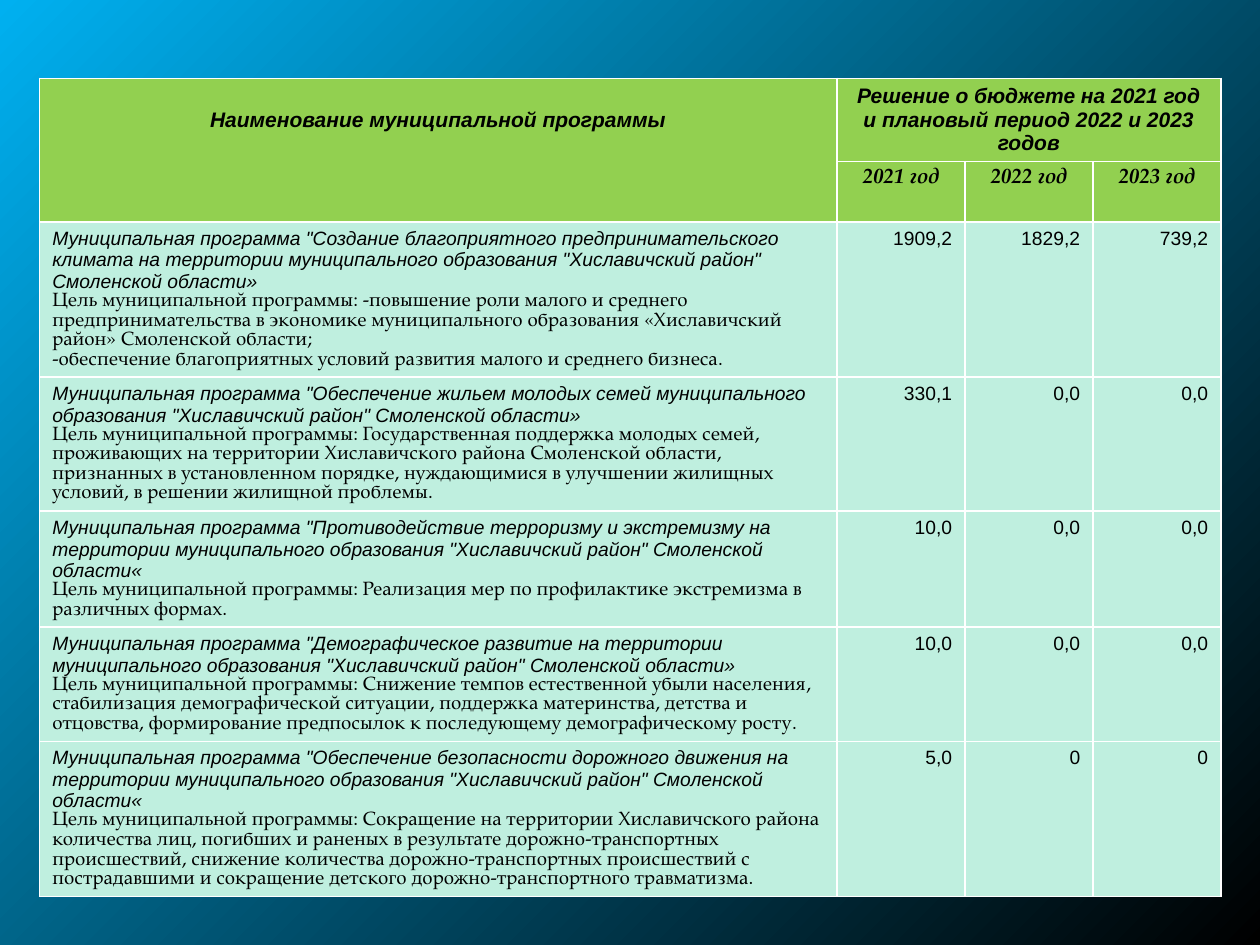
from lxml import etree
from pptx import Presentation, util as u
from pptx.dml import color
from pptx.enum import text
from pptx.oxml import ns

HEAD, ROW, INK = "92D050", "BFEFDF", "000000"
SANS, SERIF = "Arial", "TeX Gyre Pagella"
LEFT, MID, RIGHT = text.PP_ALIGN.LEFT, text.PP_ALIGN.CENTER, text.PP_ALIGN.RIGHT

NAME = "Муниципальная программа \""
AREA = "муниципального образования \"Хиславичский район\" Смоленской области"
GOAL = "Цель муниципальной программы: "

# Each programme: row height, title, goals, yearly sums
PLANS = [
    (3.13, f"Создание благоприятного предпринимательского климата на территории {AREA}»",
     ["-повышение роли малого и среднего предпринимательства в экономике "
      "муниципального образования «Хиславичский район» Смоленской области;",
      "-обеспечение благоприятных условий развития малого и среднего бизнеса."],
     ["1909,2", "1829,2", "739,2"]),
    (2.7, f"Обеспечение жильем молодых семей {AREA}»",
     ["Государственная поддержка молодых семей, проживающих на территории "
      "Хиславичского района Смоленской области, признанных в установленном порядке, "
      "нуждающимися в улучшении жилищных условий, в решении жилищной проблемы."],
     ["330,1", "0,0", "0,0"]),
    (2.34, f"Противодействие терроризму и экстремизму на территории {AREA}«",
     ["Реализация мер по профилактике экстремизма в различных формах."],
     ["10,0", "0,0", "0,0"]),
    (2.3, f"Демографическое развитие на территории {AREA}»",
     ["Снижение темпов естественной убыли населения, стабилизация демографической "
      "ситуации, поддержка материнства, детства и отцовства, формирование предпосылок "
      "к последующему демографическому росту."],
     ["10,0", "0,0", "0,0"]),
    (3.13, f"Обеспечение безопасности дорожного движения на территории {AREA}«",
     ["Сокращение на территории Хиславичского района количества лиц, погибших и "
      "раненых в результате дорожно-транспортных происшествий, снижение количества "
      "дорожно-транспортных происшествий с пострадавшими и сокращение детского "
      "дорожно-транспортного травматизма."],
     ["5,0", "0", "0"]),
]


def paint(tone):
    return color.RGBColor.from_string(tone)


def write(para, words, font=SANS, size=11, bold=False, slant=False, align=LEFT):
    para.alignment = align
    run = para.add_run()
    run.text = words
    run.font.name, run.font.size = font, u.Pt(size)
    run.font.bold, run.font.italic = bold, slant
    run.font.color.rgb = paint(INK)


class Deck:
    def __init__(self, wide, high):
        self.show = Presentation()
        self.show.slide_width, self.show.slide_height = u.Cm(wide), u.Cm(high)
        self.page = self.show.slides.add_slide(self.show.slide_layouts[6])

    def ground(self, first, last):
        """Gradient that spreads from the top left corner."""
        fill = self.page.background.fill
        fill.gradient()
        for stop, tone in zip(fill.gradient_stops, (first, last)):
            stop.color.rgb = paint(tone)
        grad = self.page.background._cSld.find(".//" + ns.qn("a:gradFill"))
        grad.remove(grad.find(ns.qn("a:lin")))
        ring = etree.SubElement(grad, ns.qn("a:path"), path="circle")
        etree.SubElement(ring, ns.qn("a:fillToRect"), r="100000", b="100000")

    def grid(self, left, top, cols, rows):
        frame = self.page.shapes.add_table(
            len(rows), len(cols), u.Cm(left), u.Cm(top), u.Cm(sum(cols)), u.Cm(sum(rows)))
        table = frame.table
        table.horz_banding = False
        for col, wide in zip(table.columns, cols):
            col.width = u.Cm(wide)
        for row, high in zip(table.rows, rows):
            row.height = u.Cm(high)
        return table

    def cell(self, box, tone, *lines, **style):
        """Fill a cell; each line is its words and its own format."""
        box.fill.solid()
        box.fill.fore_color.rgb = paint(tone)
        for num, (words, form) in enumerate(lines):
            frame = box.text_frame
            para = frame.add_paragraph() if num else frame.paragraphs[0]
            write(para, words, **{**style, **form})


def main():
    deck = Deck(25.4, 19.05)
    deck.ground("00B0F0", "000000")
    table = deck.grid(0.8, 1.58, [16.07] + [2.58] * 3,
                      [1.68, 1.15] + [plan[0] for plan in PLANS])

    # Header
    top = dict(size=12, bold=True, slant=True, align=MID)
    name, term = table.cell(0, 0), table.cell(0, 1)
    name.merge(table.cell(1, 0))
    term.merge(table.cell(0, 3))
    name.margin_top = u.Cm(0.61)
    deck.cell(name, HEAD, ("Наименование муниципальной программы", top))
    deck.cell(term, HEAD,
              ("Решение о бюджете на 2021 год и плановый период 2022 и 2023 годов", top))
    for col in range(1, 4):
        deck.cell(table.cell(1, col), HEAD, (f"{2020 + col} год", top), font=SERIF)

    # Programmes
    for row, (_, title, goals, sums) in enumerate(PLANS, 2):
        aims = [GOAL + goals[0]] + goals[1:]
        deck.cell(table.cell(row, 0), ROW, (NAME + title, dict(slant=True)),
                  *[(aim, dict(font=SERIF)) for aim in aims])
        for col, value in enumerate(sums, 1):
            deck.cell(table.cell(row, col), ROW, (value, dict(align=RIGHT)))

    deck.show.save("out.pptx")


if __name__ == "__main__":
    main()
